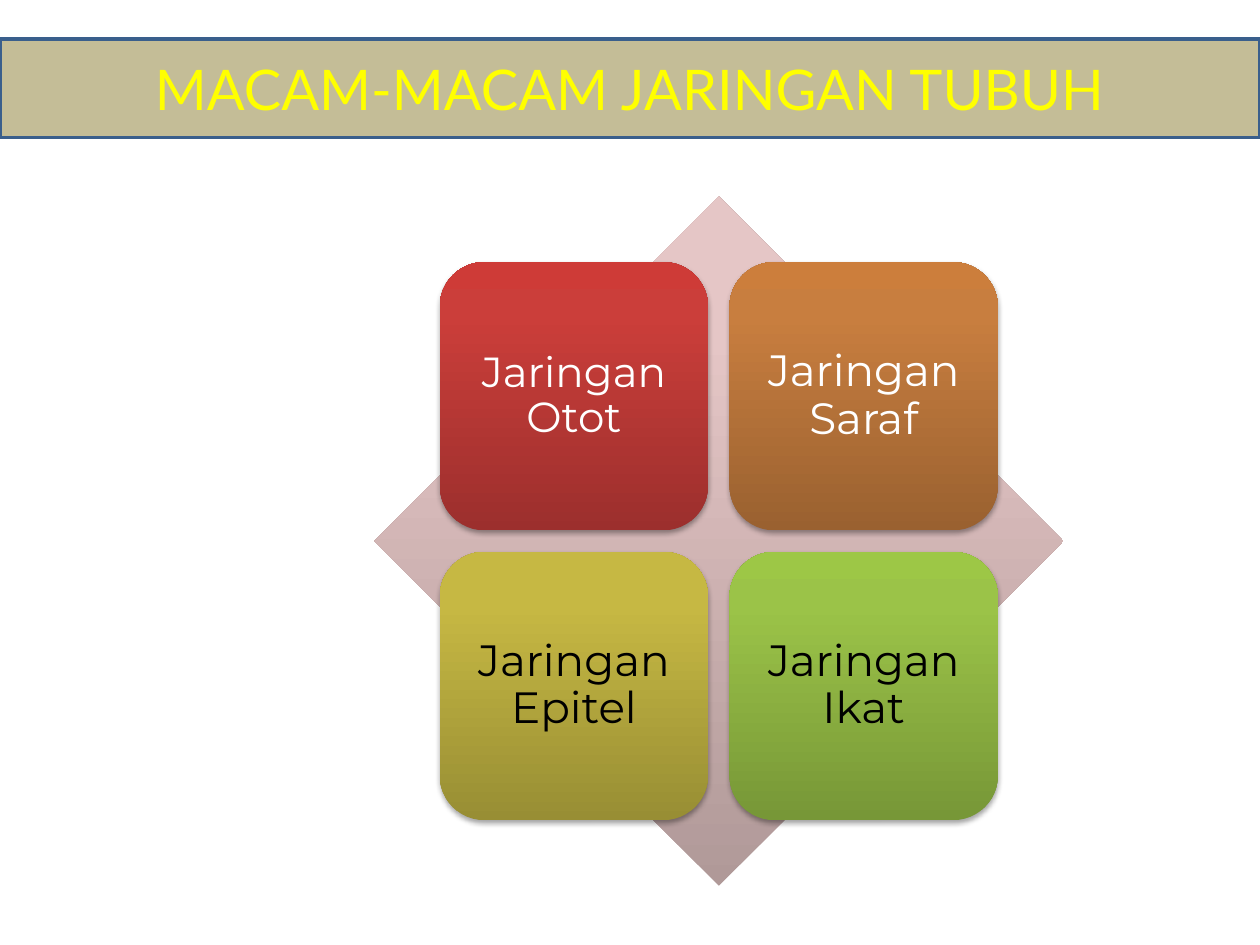
import copy

import pptx
import pptx.dml.color
import pptx.enum.shapes
import pptx.enum.text
import pptx.oxml
import pptx.oxml.ns
import pptx.util

Inches = pptx.util.Inches
Pt = pptx.util.Pt
SHAPE = pptx.enum.shapes.MSO_SHAPE

COLORS = {
    "banner": "C4BD97", "banner_line": "3A5F8C", "title": "FFFF00",
    "white": "FFFFFF", "black": "000000",
}
# Gradients run from bottom to top, with stops at 0, 80 and 100 percent
GRADIENTS = {
    "diamond": ("B09998", "E5C6C6", "E6C7C6"),
    "red": ("9C2F2D", "CB3E3A", "CE3B37"),
    "orange": ("9A6130", "C87E3F", "CC7E3C"),
    "yellow": ("988E34", "C6B843", "C9BB41"),
    "green": ("779737", "9BC348", "9DC746"),
}
STOPS = (0, 0.8, 1)
TISSUES = [
    ("Jaringan Otot", "red", "white", 24),
    ("Jaringan Saraf", "orange", "white", 25),
    ("Jaringan Epitel", "yellow", "black", 25),
    ("Jaringan Ikat", "green", "black", 25),
]
LEFT, TOP, TILE, STEP = 3.49, 2.08, 2.13, 2.3
PAD = 0.1


def rgb(name):
    return pptx.dml.color.RGBColor.from_string(COLORS[name])


def add_text(sp, text, font, size, color):
    tf = sp.text_frame
    tf.word_wrap = True
    tf.vertical_anchor = pptx.enum.text.MSO_ANCHOR.MIDDLE
    p = tf.paragraphs[0]
    p.alignment = pptx.enum.text.PP_ALIGN.CENTER
    r = p.add_run()
    r.text = text
    r.font.name = font
    r.font.size = Pt(size)
    r.font.color.rgb = rgb(color)
    return tf


def add_shadow(sp):
    ns = pptx.oxml.ns.nsdecls("a")
    effects = pptx.oxml.parse_xml(
        f'<a:effectLst {ns}><a:outerShdw blurRad="{Pt(3.1)}" dist="{Pt(1.8)}" '
        'dir="5400000" rotWithShape="0"><a:srgbClr val="000000">'
        '<a:alpha val="35000"/></a:srgbClr></a:outerShdw></a:effectLst>')
    spPr = sp.element.spPr
    spPr.replace(spPr.find(pptx.oxml.ns.qn("a:effectLst")), effects)


def add_gradient_shape(group, kind, left, top, size, gradient):
    sp = group.shapes.add_shape(
        kind, Inches(left), Inches(top), Inches(size), Inches(size))
    sp.shadow.inherit = False
    sp.line.fill.background()
    sp.fill.gradient()
    sp.fill.gradient_angle = 90
    stop_list = sp.element.spPr.find(".//" + pptx.oxml.ns.qn("a:gsLst"))
    stop_list.append(copy.deepcopy(stop_list[-1]))
    for stop, position, color in zip(
            sp.fill.gradient_stops, STOPS, GRADIENTS[gradient]):
        stop.position = position
        stop.color.rgb = pptx.dml.color.RGBColor.from_string(color)
    return sp


def add_tile(group, left, top, text, gradient, color, size):
    sp = add_gradient_shape(
        group, SHAPE.ROUNDED_RECTANGLE, left, top, TILE, gradient)
    add_shadow(sp)
    side = Inches(TILE - 2 * PAD)
    box = group.shapes.add_textbox(
        Inches(left + PAD), Inches(top + PAD), side, side)
    tf = add_text(box, text, "Montserrat", size, color)
    tf.margin_left = tf.margin_right = Inches(PAD)
    tf.margin_top = tf.margin_bottom = Inches(PAD)
    tf.paragraphs[0].line_spacing = 0.9


def add_banner(s, text):
    sp = s.shapes.add_shape(
        SHAPE.RECTANGLE, 0, Inches(0.31), Inches(10), Inches(0.78))
    sp.shadow.inherit = False
    sp.fill.solid()
    sp.fill.fore_color.rgb = rgb("banner")
    sp.line.color.rgb = rgb("banner_line")
    sp.line.width = Pt(2)
    add_text(sp, text, "Lato", 32, "title")


def main():
    prs = pptx.Presentation()
    prs.slide_width, prs.slide_height = Inches(10), Inches(7.5)
    s = prs.slides.add_slide(prs.slide_layouts[6])

    # Title banner
    add_banner(s, "MACAM-MACAM JARINGAN TUBUH")

    # Diamond with a two by two grid of tissue types
    group = s.shapes.add_group_shape()
    add_gradient_shape(group, SHAPE.DIAMOND, 2.97, 1.56, 5.47, "diamond")
    for i, tissue in enumerate(TISSUES):
        row, col = divmod(i, 2)
        add_tile(group, LEFT + col * STEP, TOP + row * STEP, *tissue)

    prs.save("out.pptx")


if __name__ == "__main__":
    main()
